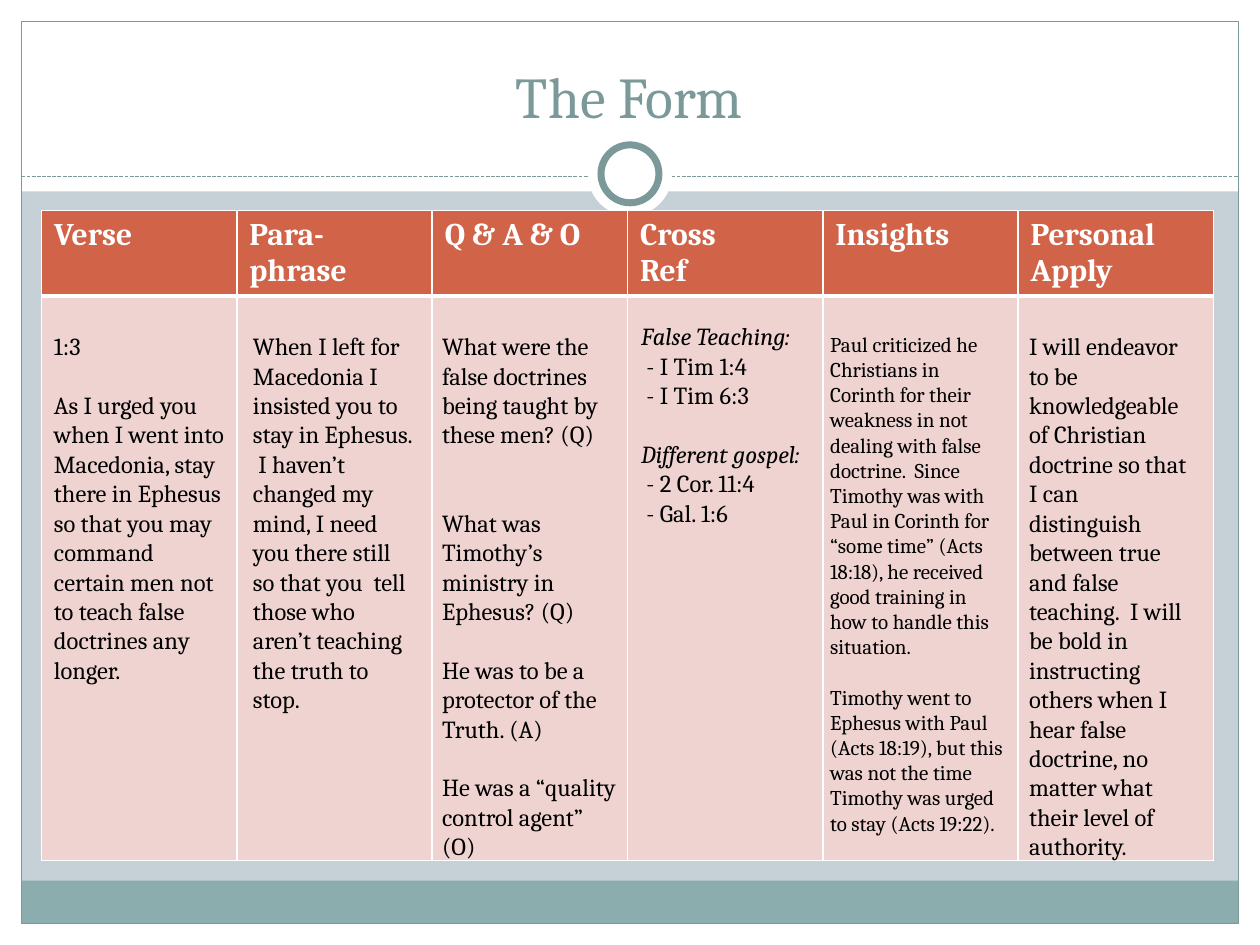
from dataclasses import dataclass

from lxml import etree
from pptx import Presentation
from pptx.dml.color import RGBColor
from pptx.enum.dml import MSO_LINE
from pptx.enum.shapes import MSO_CONNECTOR, MSO_SHAPE
from pptx.enum.text import MSO_ANCHOR, MSO_AUTO_SIZE, PP_ALIGN
from pptx.oxml.ns import qn
from pptx.util import Inches, Pt

RECT, OVAL = MSO_SHAPE.RECTANGLE, MSO_SHAPE.OVAL
STRAIGHT, DASH = MSO_CONNECTOR.STRAIGHT, MSO_LINE.SQUARE_DOT
CENTER, BOTTOM, NO_FIT = PP_ALIGN.CENTER, MSO_ANCHOR.BOTTOM, MSO_AUTO_SIZE.NONE


@dataclass(frozen=True)
class Theme:
    font: str = "Cambria"
    background: str = "C5D1D7"
    white: str = "FFFFFF"
    black: str = "000000"
    accent: str = "7C999A"
    footer: str = "8CADAE"
    header: str = "D16349"
    body: str = "EED3D0"
    title_size: int = 33
    header_size: int = 18
    note_size: int = 14
    small_size: int = 12
    line_height: float = 1.2


THEME = Theme()
WIDTH, HEIGHT = 10, 7.5
MARGIN = 0.17
HEADINGS = [["Verse"], ["Para-phrase"], ["Q & A & O"], ["Cross", "Ref"],
            ["Insights"], ["Personal", "Apply"]]

# Each note: top, height, type size, paragraphs (blank lines above, italic, text)
NOTES = [
    (2.58, 3.4, THEME.note_size, [
        (0, False, "1:3"),
        (1, False, "As I urged you when I went into Macedonia, stay there in Ephesus so that "
                   "you may command certain men not to teach false doctrines any longer.")]),
    (2.58, 3.4, THEME.note_size, [
        (0, False, "When I left for Macedonia I insisted you to stay in Ephesus.  I haven’t "
                   "changed my mind, I need you there still so that you  tell those who "
                   "aren’t teaching the truth to stop.")]),
    (2.58, 4.34, THEME.note_size, [
        (0, False, "What were the false doctrines being taught by these men? (Q)"),
        (2, False, "What was Timothy’s ministry in Ephesus? (Q)"),
        (1, False, "He was to be a protector of the Truth. (A)"),
        (1, False, "He was a “quality control agent” (O)")]),
    (2.5, 2.22, THEME.note_size, [
        (0, True, "False Teaching:"),
        (0, False, " - I Tim 1:4"),
        (0, False, " - I Tim 6:3"),
        (1, True, "Different gospel:"),
        (0, False, " - 2 Cor. 11:4"),
        (0, False, " - Gal. 1:6")]),
    (2.58, 4.34, THEME.small_size, [
        (0, False, "Paul criticized he Christians in Corinth for their weakness in not dealing "
                   "with false doctrine.  Since Timothy was with Paul in Corinth for “some "
                   "time” (Acts 18:18), he received good training in how to handle this "
                   "situation."),
        (1, False, "Timothy went to Ephesus with Paul (Acts 18:19), but this was not the time "
                   "Timothy was urged to stay (Acts 19:22).")]),
    (2.58, 4.34, THEME.note_size, [
        (0, False, "I will endeavor to be knowledgeable of Christian doctrine so that I can "
                   "distinguish between true and false teaching.  I will be bold in "
                   "instructing others when I hear false doctrine, no matter what their "
                   "level of authority.")]),
]


def rgb(value):
    return RGBColor.from_string(value)


def inches(box):
    return [Inches(length) for length in box]


def add_run(paragraph, text, size, color, bold=False, italic=False):
    run = paragraph.add_run()
    run.text = text
    font = run.font
    font.name, font.size, font.bold, font.italic = THEME.font, Pt(size), bold, italic
    font.color.rgb = rgb(color)


def paragraph_at(frame, index):
    return frame.add_paragraph() if index else frame.paragraphs[0]


def add_panel(slide, kind, box, fill=None, line=None, weight=0.75):
    panel = slide.shapes.add_shape(kind, *inches(box))
    panel.shadow.inherit = False
    if fill:
        panel.fill.solid()
        panel.fill.fore_color.rgb = rgb(fill)
    else:
        panel.fill.background()
    if line:
        panel.line.color.rgb = rgb(line)
        panel.line.width = Pt(weight)
    else:
        panel.line.fill.background()


def add_frame(slide, box):
    left, top, width, height = box
    right, bottom = left + width, top + height
    inner = (left + MARGIN, top + MARGIN, width - 2 * MARGIN, height - 2 * MARGIN)
    # White edges, title area and footer band
    for edge in [(left, bottom - MARGIN, width, MARGIN), (left, top, width, 1.52),
                 (left, top, MARGIN, height), (right - MARGIN, top, MARGIN, height)]:
        add_panel(slide, RECT, edge, THEME.white)
    footer = 2 * MARGIN
    add_panel(slide, RECT, (inner[0], bottom - MARGIN - footer, inner[2], footer), THEME.footer)
    add_panel(slide, RECT, inner, line=THEME.accent)
    # Dashed rule under the title
    rule_y = Inches(top + 1.4)
    rule = slide.shapes.add_connector(STRAIGHT, Inches(inner[0]), rule_y,
                                      Inches(right - MARGIN), rule_y)
    rule.line.color.rgb = rgb(THEME.accent)
    rule.line.width = Pt(0.75)
    rule.line.dash_style = DASH
    etree.SubElement(rule.element.spPr, qn("a:effectLst"))
    # Ring centred on the rule
    center_x, center_y = left + width / 2, top + 1.38
    for size, line in [(0.67, None), (0.46, THEME.accent)]:
        ring = (center_x - size / 2, center_y - size / 2, size, size)
        add_panel(slide, OVAL, ring, THEME.white, line, 4)


def add_title(slide, box, text):
    title = slide.shapes.title
    title.left, title.top, title.width, title.height = inches(box)
    title.element.getparent().append(title.element)  # bring in front of the frame
    frame = title.text_frame
    frame.auto_size, frame.vertical_anchor = NO_FIT, BOTTOM
    frame.paragraphs[0].alignment = CENTER
    add_run(frame.paragraphs[0], text, THEME.title_size, THEME.accent)


def style_cell(cell, fill, top, bottom):
    properties = cell._tc.get_or_add_tcPr()
    for side, weight in [("L", 1), ("R", 1), ("T", top), ("B", bottom)]:
        border = etree.SubElement(properties, qn(f"a:ln{side}"), w=str(Pt(weight)))
        paint = etree.SubElement(border, qn("a:solidFill"))
        etree.SubElement(paint, qn("a:srgbClr"), val=THEME.white)
    cell.fill.solid()
    cell.fill.fore_color.rgb = rgb(fill)


def add_form(slide, box, header_height):
    left, top, width, height = box
    table = slide.shapes.add_table(2, len(HEADINGS), *inches(box)).table
    table.rows[0].height = Inches(header_height)
    table.rows[1].height = Inches(height - header_height)
    for column, heading in enumerate(HEADINGS):
        table.columns[column].width = Inches(width / len(HEADINGS))
        header, body = table.cell(0, column), table.cell(1, column)
        style_cell(header, THEME.header, 1, 3)
        style_cell(body, THEME.body, 3, 1)
        for index, text in enumerate(heading):
            add_run(paragraph_at(header.text_frame, index), text,
                    THEME.header_size, THEME.white, bold=True)


def add_note(slide, box, size, paragraphs):
    frame = slide.shapes.add_textbox(*inches(box)).text_frame
    frame.word_wrap = True
    for index, (gap, italic, text) in enumerate(paragraphs):
        paragraph = paragraph_at(frame, index)
        paragraph.space_before = Pt(gap * size * THEME.line_height)
        add_run(paragraph, text, size, THEME.black, italic=italic)


def main():
    deck = Presentation()
    deck.slide_width, deck.slide_height = Inches(WIDTH), Inches(HEIGHT)
    slide = deck.slides.add_slide(deck.slide_layouts[5])
    slide.background.fill.solid()
    slide.background.fill.fore_color.rgb = rgb(THEME.background)

    add_frame(slide, (0, 0, WIDTH, HEIGHT))
    add_title(slide, (0.33, 0.25, 9.33, 0.83), "The Form")
    add_form(slide, (0.33, 1.67, 9.3, 5.16), 0.68)
    # Notes alternate between a wide and a narrow column
    left = 0.33
    for index, (top, height, size, paragraphs) in enumerate(NOTES):
        width = 1.5 if index % 2 else 1.58
        add_note(slide, (left, top, width, height), size, paragraphs)
        left += width
    deck.save("out.pptx")


if __name__ == "__main__":
    main()
